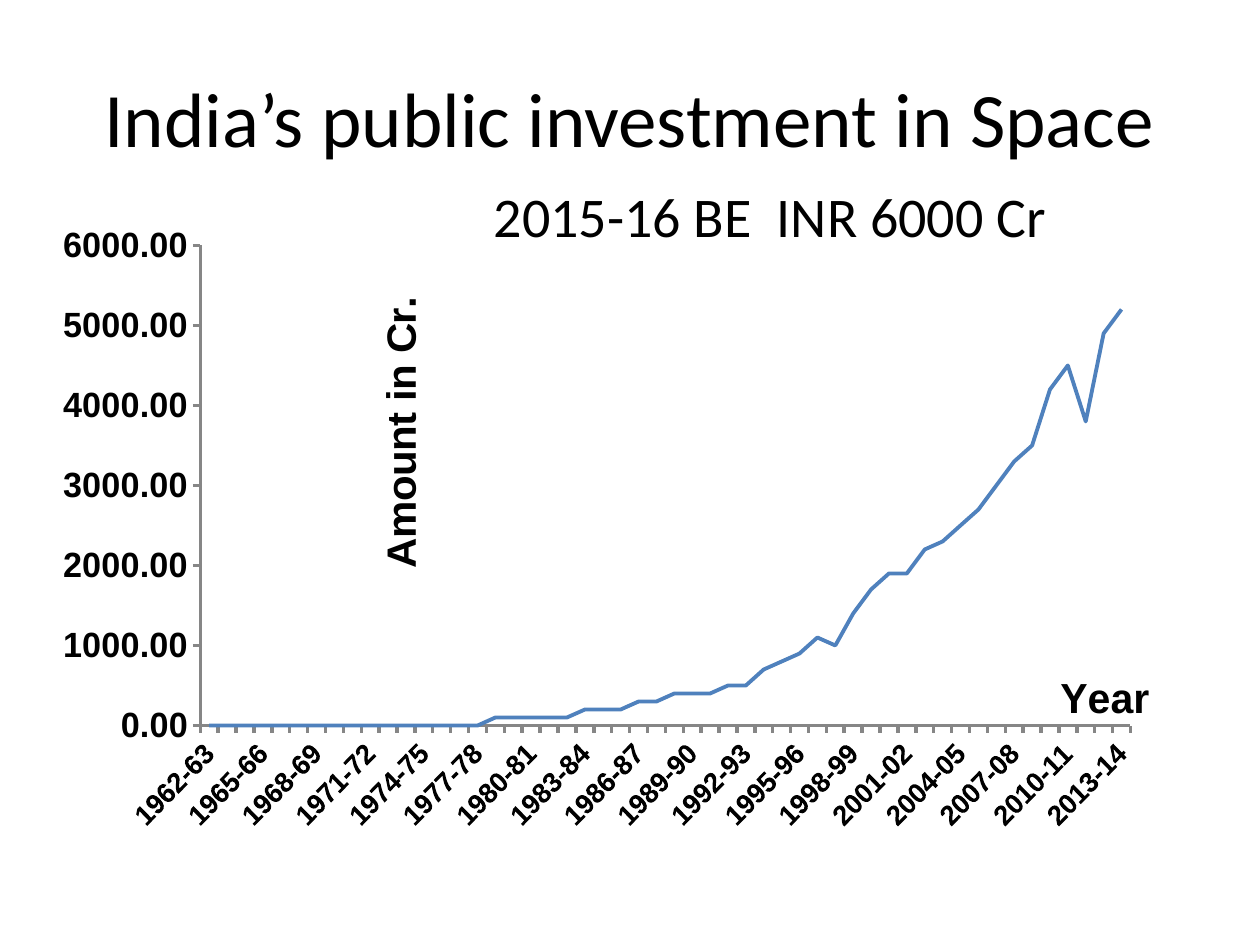
from lxml import etree
from pptx import Presentation
from pptx import util as u
from pptx.chart.data import CategoryChartData
from pptx.dml.color import RGBColor
from pptx.enum import chart as ch, text
from pptx.oxml.ns import qn

BLACK = RGBColor(0x00, 0x00, 0x00)
BLUE = RGBColor(0x4F, 0x81, 0xBD)
GREY = RGBColor(0x86, 0x86, 0x86)

HEADING = "India’s public investment in Space"
ESTIMATE = "2015-16 BE  INR 6000 Cr"
FIRST_YEAR = 1962
SPENDING = (
    [0] * 16 + [100] * 5 + [200] * 3 + [300] * 2 + [400] * 3 + [500] * 2
    + [700, 800, 900, 1100, 1000, 1400, 1700, 1900, 1900, 2200, 2300]
    + [2500, 2700, 3000, 3300, 3500, 4200, 4500, 3800, 4900, 5200]
)
YEARS = [f"{y}-{(y + 1) % 100:02d}"
         for y in range(FIRST_YEAR, FIRST_YEAR + len(SPENDING))]

WIDTH, HEIGHT = u.Inches(10), u.Inches(7.5)
MARGIN = 0.05
PLOT = {"x": 0.1, "y": 0.04, "w": 0.84, "h": 0.77}
YEAR_AT = {"x": 0.87, "y": 0.71}
AMOUNT_AT = {"x": 0.25, "y": 0.1}


def box(left, top, width, height):
    return (int(WIDTH * left), int(HEIGHT * top),
            int(WIDTH * width), int(HEIGHT * height))


def set_font(font, size, name="Arial", bold=True):
    font.size, font.name, font.bold = u.Pt(size), name, bold
    font.color.rgb = BLACK


def write(frame, words, size, name="Arial", bold=True, align=None):
    frame.text = words
    paragraph = frame.paragraphs[0]
    paragraph.alignment = align
    set_font(paragraph.runs[0].font, size, name, bold)


def place(parent, index, shares, inner=False):
    for old in parent.findall(qn("c:layout")):
        parent.remove(old)
    layout = etree.Element(qn("c:layout"))
    manual = etree.SubElement(layout, qn("c:manualLayout"))
    settings = [("layoutTarget", "inner")] if inner else []
    settings += [("xMode", "edge"), ("yMode", "edge"), *shares.items()]
    for tag, value in settings:
        etree.SubElement(manual, qn(f"c:{tag}")).set("val", str(value))
    parent.insert(index, layout)


def style_axis(axis, title, title_at, title_turn, label_size):
    axis.has_major_gridlines = False
    axis.major_tick_mark = ch.XL_TICK_MARK.OUTSIDE
    axis.minor_tick_mark = ch.XL_TICK_MARK.NONE
    axis.format.line.color.rgb = GREY
    axis.format.line.width = u.Pt(2)
    set_font(axis.tick_labels.font, label_size)
    frame = axis.axis_title.text_frame
    write(frame, title, 24)
    body = frame._txBody.find(qn("a:bodyPr"))
    body.set("rot", str(title_turn * 60000))
    body.set("vert", "horz")
    place(axis.axis_title._element, 1, title_at)


def add_spending_chart(slide):
    data = CategoryChartData(number_format="0.00")
    data.categories = YEARS
    data.add_series("Series 1", SPENDING)
    chart = slide.shapes.add_chart(
        ch.XL_CHART_TYPE.LINE, *box(MARGIN, 1.75 / 7.5, 1 - 2 * MARGIN, 0.66),
        data).chart
    set_font(chart.font, 10)
    chart.has_legend = False
    chart.has_title = False
    plot = chart.plots[0]
    plot.vary_by_categories = False
    spending = plot.series[0]
    spending.smooth = False
    spending.marker.style = ch.XL_MARKER_STYLE.NONE
    spending.format.line.color.rgb = BLUE
    spending.format.line.width = u.Pt(2.25)

    years, amounts = chart.category_axis, chart.value_axis
    style_axis(years, "Year", YEAR_AT, 0, 16)
    style_axis(amounts, "Amount in Cr.", AMOUNT_AT, -90, 20)
    amounts.minimum_scale, amounts.maximum_scale = 0, 6000
    amounts.major_unit = 1000
    amounts.tick_labels.number_format = "0.00"
    amounts.tick_labels.number_format_is_linked = False

    years_xml = years._element
    years_xml.find(qn("c:txPr")).find(qn("a:bodyPr")).set("rot", str(-45 * 60000))
    last = years_xml.find(qn("c:noMultiLvlLbl"))
    for tag, step in (("tickLblSkip", 3), ("tickMarkSkip", 1)):
        skip = etree.Element(qn(f"c:{tag}"))
        skip.set("val", str(step))
        last.addprevious(skip)
    place(years_xml.getparent(), 0, PLOT, inner=True)


def main():
    deck = Presentation()
    deck.slide_width, deck.slide_height = WIDTH, HEIGHT
    slide = deck.slides.add_slide(deck.slide_layouts[5])

    heading = slide.shapes.title
    heading.left, heading.top, heading.width, heading.height = box(
        MARGIN, 0.04, 1 - 2 * MARGIN, 1 / 6)
    heading.text_frame.vertical_anchor = text.MSO_ANCHOR.MIDDLE
    write(heading.text_frame, HEADING, 44, "Calibri", False,
          text.PP_ALIGN.CENTER)

    add_spending_chart(slide)

    estimate = slide.shapes.add_textbox(
        *box(0.382, 1.39 / 7.5, 0.463, 0.64 / 7.5)).text_frame
    estimate.word_wrap = False
    estimate.auto_size = text.MSO_AUTO_SIZE.SHAPE_TO_FIT_TEXT
    write(estimate, ESTIMATE, 32, "Calibri", False)

    deck.save("out.pptx")


if __name__ == "__main__":
    main()
